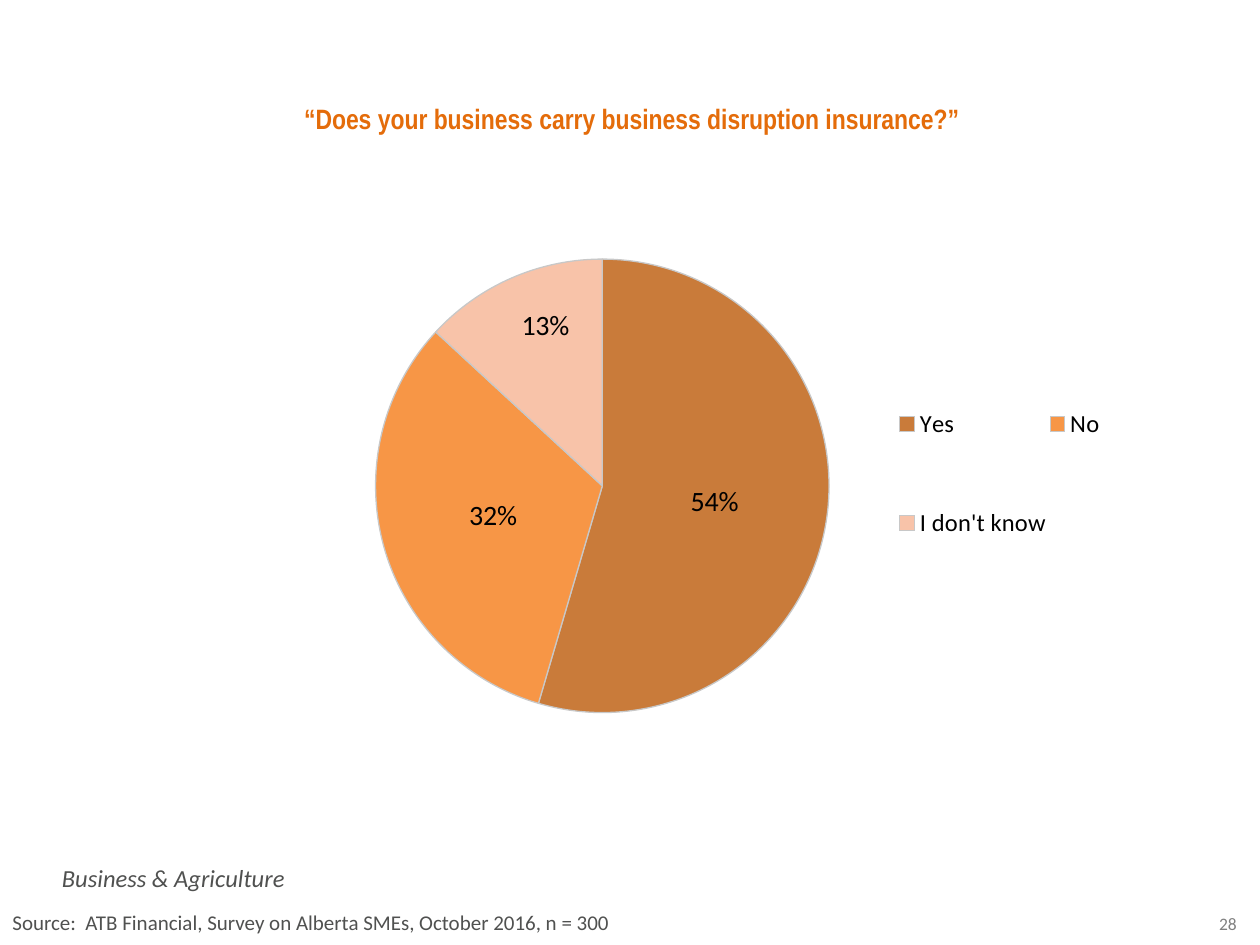
import pptx
import pptx.chart.data
import pptx.dml.color
import pptx.enum.chart
import pptx.enum.shapes
import pptx.enum.text
import pptx.oxml
import pptx.oxml.ns
import pptx.util

Pt = pptx.util.Pt
ALIGN = pptx.enum.text.PP_ALIGN
COLORS = {
    "title": "E46C0A", "text": "505150", "number": "808080", "label": "000000",
    "Yes  ": "C97B3A", "No  ": "F79646", "I don't know": "F8C3A9", "border": "C8C8C8",
}


def set_font(font, color, **values):
    for name, value in values.items():
        setattr(font, name, value)
    font.color.rgb = pptx.dml.color.RGBColor.from_string(COLORS[color])


def make_layout(x, y, w=None, h=None, inner=False, offset=False):
    """Return a c:layout element; values are fractions of the chart area."""
    parts = '<c:layoutTarget val="inner"/>' if inner else ""
    if not offset:
        parts += '<c:xMode val="edge"/><c:yMode val="edge"/>'
    for tag, value in (("x", x), ("y", y), ("w", w), ("h", h)):
        if value is not None:
            parts += f'<c:{tag} val="{value}"/>'
    return pptx.oxml.parse_xml(
        f'<c:layout {pptx.oxml.ns.nsdecls("c")}><c:manualLayout>{parts}</c:manualLayout></c:layout>')


presentation = pptx.Presentation()
presentation.slide_width, presentation.slide_height = Pt(720), Pt(540)
slide = presentation.slides.add_slide(presentation.slide_layouts[6])

# Question callout, its tail tucked inside the body
question = slide.shapes.add_shape(
    pptx.enum.shapes.MSO_SHAPE.ROUNDED_RECTANGULAR_CALLOUT,
    Pt(17.3), Pt(47.5), Pt(687.6), Pt(40.3))
for index, value in enumerate((-0.15, 0.39, 0.17)):
    question.adjustments[index] = value
question.shadow.inherit = False
question.fill.background()
question.line.fill.background()
question.text_frame.text = "“Does your business carry business disruption insurance?”"
question.text_frame.vertical_anchor = pptx.enum.text.MSO_ANCHOR.MIDDLE
paragraph = question.text_frame.paragraphs[0]
paragraph.alignment = ALIGN.CENTER
set_font(paragraph.font, "title", name="Arial Narrow", size=Pt(16), bold=True)

# Footer texts
footers = [
    ("28", (684, 518.4, 35.3, 19.4), 10, "number", ALIGN.CENTER, False),
    ("Business & Agriculture", (28.3, 489.6, 202.3, 24.2), 14, "text", ALIGN.LEFT, True),
    ("Source:  ATB Financial, Survey on Alberta SMEs, October 2016, n = 300",
     (0, 516.2, 670.3, 21.8), 12, "text", ALIGN.LEFT, False),
]
for text, box, size, color, alignment, italic in footers:
    shape = slide.shapes.add_textbox(*map(Pt, box))
    shape.text_frame.word_wrap = True
    shape.text_frame.text = text
    paragraph = shape.text_frame.paragraphs[0]
    paragraph.alignment = alignment
    set_font(paragraph.font, color, name="Calibri", size=Pt(size), italic=italic)

# Pie of answers
answers = {"Yes  ": 0.54, "No  ": 0.32, "I don't know": 0.13}
chart_data = pptx.chart.data.CategoryChartData(number_format="0%")
chart_data.categories = list(answers)
chart_data.add_series("Series 1", list(answers.values()))
chart = slide.shapes.add_chart(
    pptx.enum.chart.XL_CHART_TYPE.PIE, Pt(31.7), Pt(141), Pt(658), Pt(355), chart_data).chart
chart.has_title = False
set_font(chart.font, "label", name="Calibri", size=Pt(18))

chart.has_legend = True
legend = chart.legend
legend.position = pptx.enum.chart.XL_LEGEND_POSITION.RIGHT
legend.include_in_layout = False
set_font(legend.font, "label", name="Calibri", size=Pt(14))
legend_element = chart.element.xpath("//c:legend")[0]
for old_layout in legend_element.xpath("c:layout"):
    legend_element.remove(old_layout)
legend_element.xpath("c:legendPos")[0].addnext(make_layout(0.73, 0.15, 0.19, 0.43))

plot_area = chart.element.xpath("//c:plotArea")[0]
for old_layout in plot_area.xpath("c:layout"):
    plot_area.remove(old_layout)
plot_area.insert(0, make_layout(0.04, 0.02, 0.87, 0.73, inner=True))

plot = chart.plots[0]
plot.vary_by_categories = True
series = plot.series[0]
for index, answer in enumerate(answers):
    slice_format = series.points[index].format
    slice_format.fill.solid()
    slice_format.fill.fore_color.rgb = pptx.dml.color.RGBColor.from_string(COLORS[answer])
    slice_format.line.color.rgb = pptx.dml.color.RGBColor.from_string(COLORS["border"])
    slice_format.line.width = Pt(0.75)

center = pptx.enum.chart.XL_LABEL_POSITION.CENTER
labels = series.data_labels
label_values = {
    "show_percentage": True, "show_value": False, "position": center,
    "number_format": "0%", "number_format_is_linked": False,
}
for name, value in label_values.items():
    setattr(labels, name, value)
set_font(labels.font, "label", name="Calibri", size=Pt(16))

# "Yes" shows its value; "I don't know" shows its share, moved outward
for index in (0, 2):
    label = series.points[index].data_label
    set_font(label.font, "label", name="Calibri", size=Pt(16))
    label.position = center
moved_label = chart.element.xpath('//c:dLbl[c:idx/@val="2"]')[0]
moved_label.xpath("c:showVal")[0].set("val", "0")
moved_label.xpath("c:showPercent")[0].set("val", "1")
moved_label.xpath("c:idx")[0].addnext(make_layout(-0.01, -0.09, offset=True))

presentation.save("out.pptx")
